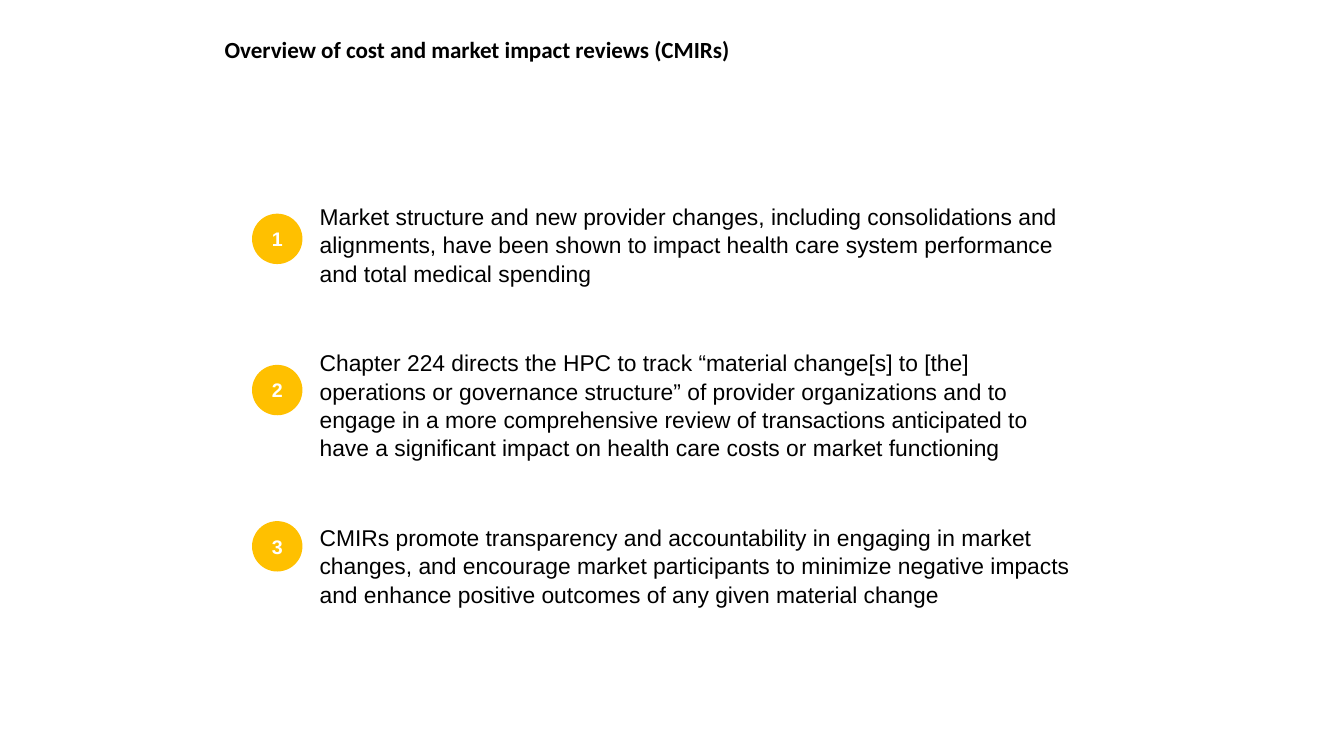
from pptx import Presentation
from pptx.dml.color import RGBColor
from pptx.enum.shapes import MSO_SHAPE
from pptx.enum.text import MSO_ANCHOR, PP_ALIGN
from pptx.util import Inches, Pt

BLACK = RGBColor(0x00, 0x00, 0x00)
WHITE = RGBColor(0xFF, 0xFF, 0xFF)
GOLD = RGBColor(0xFF, 0xC0, 0x00)
OVAL = MSO_SHAPE.OVAL
MIDDLE = MSO_ANCHOR.MIDDLE
CENTER = PP_ALIGN.CENTER

# Top of each number badge, with its point
POINTS = [
    (2.12, "Market structure and new provider changes, including consolidations "
           "and alignments, have been shown to impact health care system "
           "performance and total medical spending"),
    (3.62, "Chapter 224 directs the HPC to track “material change[s] to [the] "
           "operations or governance structure” of provider organizations and to "
           "engage in a more comprehensive review of transactions anticipated to "
           "have a significant impact on health care costs or market functioning"),
    (5.17, "CMIRs promote transparency and accountability in engaging in market "
           "changes, and encourage market participants to minimize negative "
           "impacts and enhance positive outcomes of any given material change"),
]


def style(para, text, name, size, color, bold=False):
    para.text = text
    para.font.name = name
    para.font.size = Pt(size)
    para.font.color.rgb = color
    para.font.bold = bold


prs = Presentation()
prs.slide_width = Inches(13.33)
prs.slide_height = Inches(7.5)
slide = prs.slides.add_slide(prs.slide_layouts[6])

# Title
title = slide.shapes.add_textbox(Inches(2.13), Inches(0.34), Inches(9.62), Inches(0.33))
frame = title.text_frame
frame.word_wrap = True
frame.vertical_anchor = MIDDLE
style(frame.paragraphs[0], "Overview of cost and market impact reviews (CMIRs)",
      "Calibri", 16.5, BLACK, True)
frame.paragraphs[0].line_spacing = 0.9

# Body text box
body = slide.shapes.add_textbox(Inches(3.17), Inches(2), Inches(7.54), Inches(4.05))
frame = body.text_frame
frame.word_wrap = True
frame.margin_left = frame.margin_right = 0
frame.margin_top = frame.margin_bottom = 0

# Points and their number badges
for num, (top, text) in enumerate(POINTS, 1):
    para = frame.paragraphs[0] if num == 1 else frame.add_paragraph()
    style(para, text, "Arial", 16.3, BLACK)
    para.line_spacing = 1.04
    if num > 1:
        para.space_before = Pt(43.4)

    badge = slide.shapes.add_shape(OVAL, Inches(2.5), Inches(top), Inches(0.5), Inches(0.5))
    badge.shadow.inherit = False
    badge.fill.solid()
    badge.fill.fore_color.rgb = GOLD
    badge.line.fill.background()
    badge.text_frame.vertical_anchor = MIDDLE
    label = badge.text_frame.paragraphs[0]
    style(label, str(num), "Arial", 14, WHITE, True)
    label.alignment = CENTER

prs.save("out.pptx")
